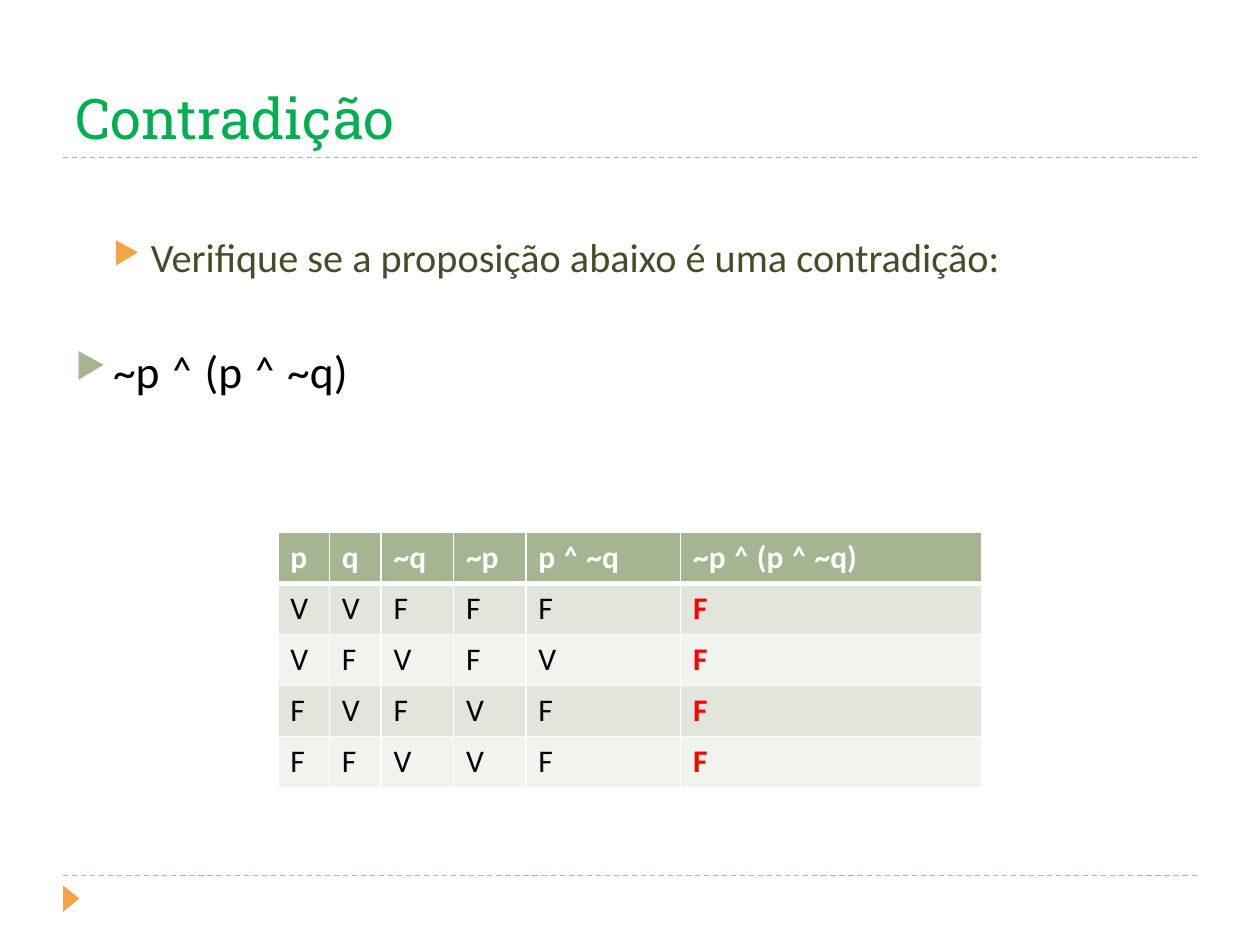
from lxml.etree import SubElement as Sub
from pptx import Presentation
from pptx.dml.color import RGBColor
from pptx.enum.dml import MSO_LINE
from pptx.enum.shapes import MSO_CONNECTOR as Conn, MSO_SHAPE as Shape
from pptx.enum.text import MSO_ANCHOR as Anchor, PP_ALIGN as Align
from pptx.oxml.ns import qn
from pptx.util import Cm, Pt

ORANGE, SAGE, WHITE = "F3A447", "A5B592", "FFFFFF"
LEFT, WIDTH = 1.27, 22.86


def color(code):
    return RGBColor.from_string(code)


def style(font, size, code, name="Calibri", bold=False):
    font.size, font.name, font.bold = Pt(size), name, bold
    font.color.rgb = color(code)


def add_rule(slide, x, y, width):
    rule = slide.shapes.add_connector(
        Conn.STRAIGHT, Cm(x), Cm(y), Cm(x + width), Cm(y))
    rule.line.color.rgb = color(ORANGE)
    rule.line.width = Pt(0.75)
    rule.line.dash_style = MSO_LINE.DASH
    Sub(rule._element.spPr, qn("a:effectLst"))


def add_frame(slide, x, y, width, height):
    # Rules above and below the content
    add_rule(slide, x, y, width)
    add_rule(slide, x, y + height, width)
    # Footer marker
    mark = slide.shapes.add_shape(
        Shape.ISOSCELES_TRIANGLE, Cm(x - 0.1), Cm(y + height + 0.3),
        Cm(0.53), Cm(0.33))
    mark.rotation = 90
    mark.shadow.inherit = False
    mark.fill.solid()
    mark.fill.fore_color.rgb = color(ORANGE)
    mark.line.fill.background()


def set_title(slide, text, x, y, width, height):
    title = slide.shapes.title
    title.left, title.top = Cm(x), Cm(y)
    title.width, title.height = Cm(width), Cm(height)
    frame = title.text_frame
    frame.text = text
    frame.vertical_anchor = Anchor.BOTTOM
    para = frame.paragraphs[0]
    para.alignment = Align.LEFT
    style(para.font, 32, "00B050", "Roboto Slab")


def add_bullet(para, code, indent):
    props = para._p.get_or_add_pPr()
    props.set("marL", str(Cm(indent)))
    props.set("indent", str(-Cm(0.76)))
    tint = Sub(props, qn("a:buClr"))
    Sub(tint, qn("a:srgbClr")).set("val", code)
    Sub(props, qn("a:buSzPct")).set("val", "76000")
    Sub(props, qn("a:buChar")).set("char", "▶")


def add_body(slide, items, x, y, width, height):
    box = slide.shapes.add_textbox(Cm(x), Cm(y), Cm(width), Cm(height))
    frame = box.text_frame
    frame.word_wrap = True
    frame.margin_top = Cm(1.31)
    for i, (text, size, code, dot, indent, align, gap) in enumerate(items):
        para = frame.paragraphs[0] if i == 0 else frame.add_paragraph()
        para.text = text
        para.alignment = align
        add_bullet(para, dot, indent)
        para.space_before = Pt(gap)
        style(para.font, size, code)


def add_edges(cell, top, bottom):
    props = cell._tc.get_or_add_tcPr()
    for side, width in zip("LRTB", (1, 1, top, bottom)):
        edge = Sub(props, qn(f"a:ln{side}"))
        edge.set("w", str(Pt(width)))
        fill = Sub(edge, qn("a:solidFill"))
        Sub(fill, qn("a:srgbClr")).set("val", WHITE)


def add_truth(slide, rows, widths, x, y, height):
    table = slide.shapes.add_table(
        len(rows), len(widths), Cm(x), Cm(y),
        Cm(sum(widths)), Cm(height)).table
    for col, width in zip(table.columns, widths):
        col.width = Cm(width)
    for r, row in enumerate(rows):
        head = r == 0
        back = SAGE if head else ("F0F3EE", "E1E5DC")[r % 2]
        for c, text in enumerate(row):
            last = c == len(row) - 1
            cell = table.cell(r, c)
            add_edges(cell, 3 if r == 1 else 1, 3 if head else 1)
            cell.fill.solid()
            cell.fill.fore_color.rgb = color(back)
            cell.text = text
            ink = WHITE if head else "FF0000" if last else "000000"
            style(cell.text_frame.paragraphs[0].font, 18, ink,
                  bold=head or last)


def main():
    deck = Presentation()
    deck.slide_width, deck.slide_height = Cm(25.4), Cm(19.05)
    slide = deck.slides.add_slide(deck.slide_layouts[5])

    add_frame(slide, LEFT, 3.18, WIDTH, 14.47)
    set_title(slide, "Contradição", LEFT, 0.43, WIDTH, 2.74)

    # Text, size, colour, bullet colour, indent, alignment, space before
    items = [
        ("Verifique se a proposição abaixo é uma contradição:",
         23, "444D26", ORANGE, 1.52, Align.JUSTIFY, 0),
        ("~p ˄ (p ˄ ~q)", 26, "000000", SAGE, 0.76, Align.LEFT, 35.5),
    ]
    add_body(slide, items, LEFT, 3.38, WIDTH, 13.72)

    # Truth table
    rows = [("p", "q", "~q", "~p", "p ˄ ~q", "~p ˄ (p ˄ ~q)"),
            *("VVFFFF", "VFVFVF", "FVFVFF", "FFVVFF")]
    widths = [1.04, 1.04, 1.46, 1.46, 3.12, 6.07]
    add_truth(slide, rows, widths, 5.6, 10.73, 5.15)

    deck.save("out.pptx")


if __name__ == "__main__":
    main()
